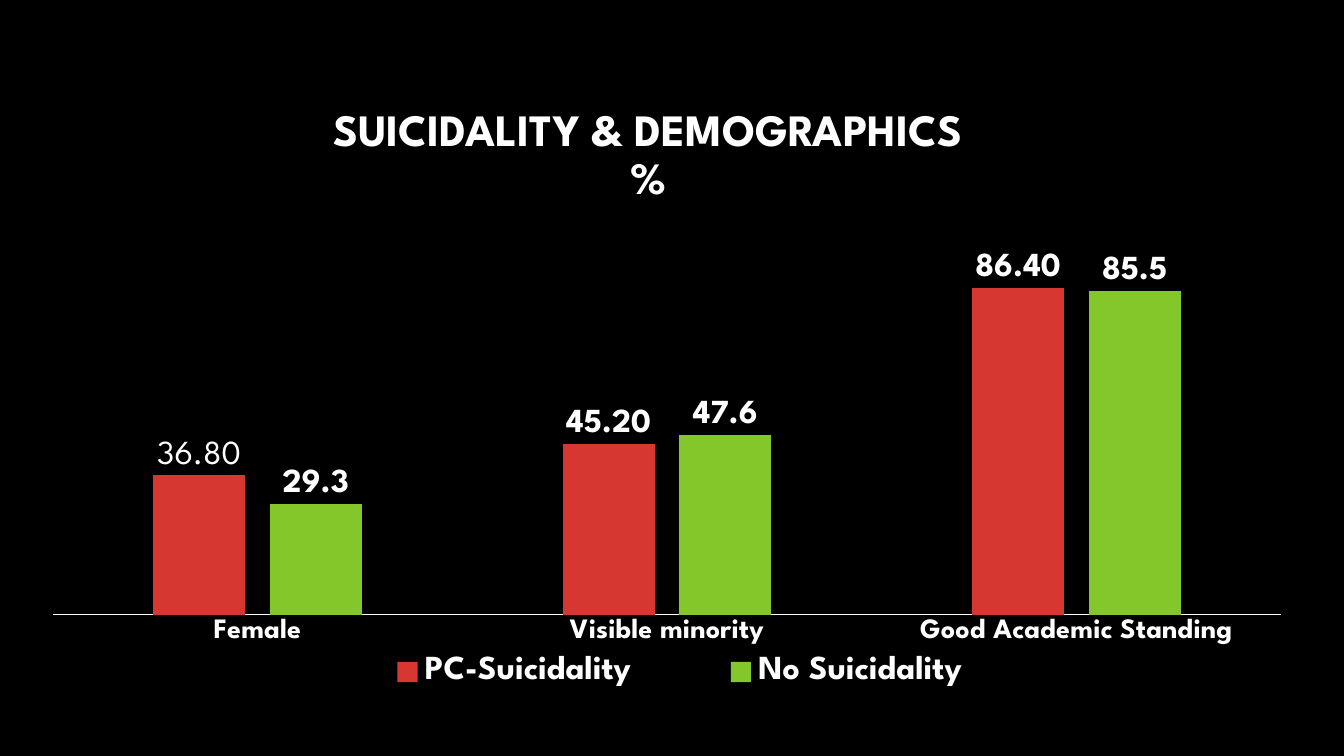
from lxml import etree
from pptx import Presentation
from pptx.chart.data import CategoryChartData
from pptx.dml.color import RGBColor
from pptx.enum.chart import XL_CHART_TYPE, XL_LABEL_POSITION, XL_LEGEND_POSITION, XL_TICK_MARK
from pptx.enum.text import MSO_ANCHOR, PP_ALIGN
from pptx.oxml import parse_xml
from pptx.oxml.ns import nsdecls
from pptx.util import Inches, Pt

WHITE = "FFFFFF"


def write(frame, text, size=24, color=WHITE, bold=True, align=PP_ALIGN.CENTER, spacing=None):
    paragraph = frame.paragraphs[0]
    paragraph.text = text
    paragraph.alignment = align
    paragraph.line_spacing = spacing
    for run in paragraph.runs:
        style(run.font, size, color, bold)


def style(font, size, color=WHITE, bold=True):
    font.name = "League Spartan"
    font.size = Pt(size)
    font.bold = bold
    font.color.rgb = RGBColor.from_string(color)


prs = Presentation()
prs.slide_width, prs.slide_height = Inches(13.33), Inches(7.5)
slide = prs.slides.add_slide(prs.slide_layouts[6])
slide.background.fill.solid()
slide.background.fill.fore_color.rgb = RGBColor.from_string("000000")

title = slide.shapes.add_textbox(Inches(0.27), Inches(0.84), Inches(12.32), Inches(1.41)).text_frame
title.word_wrap = True
title.vertical_anchor = MSO_ANCHOR.MIDDLE
write(title, "SUICIDALITY & DEMOGRAPHICS\v%", size=32, spacing=0.9)

shares = CategoryChartData()
shares.categories = ["Female", "Visible minority", "Good Academic Standing"]
shares.add_series("PC-Suicidality", [36.8, 45.2, 86.4], number_format="#,##0.00")
shares.add_series("No Suicidality", [29.3, 47.6, 85.5])
chart = slide.shapes.add_chart(
    XL_CHART_TYPE.COLUMN_CLUSTERED, Inches(0.27), Inches(2.25), Inches(12.69), Inches(4.75), shares
).chart
style(chart.font, 10, bold=False)
chart.has_title = False

demographics = chart.category_axis
demographics.major_tick_mark = XL_TICK_MARK.NONE
demographics.format.line.color.rgb = RGBColor.from_string(WHITE)
demographics.format.line.width = Pt(0.75)
style(demographics.tick_labels.font, 20)

percent = chart.value_axis
percent.minimum_scale, percent.maximum_scale = 0, 100
percent.has_major_gridlines = False
percent.visible = False

chart.has_legend = True
chart.legend.position = XL_LEGEND_POSITION.BOTTOM
chart.legend.include_in_layout = False
style(chart.legend.font, 24)

columns = chart.plots[0]
columns.gap_width = 219
columns.overlap = -27
columns.vary_by_categories = False
for group, color, number_format in zip(columns.series, ("D63731", "84C72A"), ("#,##0.00", "General")):
    group.format.fill.solid()
    group.format.fill.fore_color.rgb = RGBColor.from_string(color)
    labels = group.data_labels
    labels.show_value = True
    labels.position = XL_LABEL_POSITION.OUTSIDE_END
    labels.number_format = number_format
    labels.number_format_is_linked = False
    style(labels.font, 24)

female_label = columns.series[0].points[0].data_label
write(female_label.text_frame, "36.80", bold=False)
female_label.position = XL_LABEL_POSITION.OUTSIDE_END


def layout_xml(x, y, w, h, target=""):
    """Return a manual layout in fractions of the chart area."""
    return parse_xml(
        f'<c:layout {nsdecls("c")}><c:manualLayout>{target}'
        '<c:xMode val="edge"/><c:yMode val="edge"/>'
        f'<c:x val="{x}"/><c:y val="{y}"/><c:w val="{w}"/><c:h val="{h}"/>'
        "</c:manualLayout></c:layout>"
    )


plot_area = chart.element.chart.plotArea
for automatic in plot_area.findall("{*}layout"):
    plot_area.remove(automatic)
plot_area.insert(0, layout_xml(0.02, 0.02, 0.96, 0.79, '<c:layoutTarget val="inner"/>'))

legend = chart.element.chart.find("{*}legend")
for automatic in legend.findall("{*}layout"):
    legend.remove(automatic)
legend.find("{*}legendPos").addnext(layout_xml(0.22, 0.88, 0.58, 0.1))

prs.save("out.pptx")
